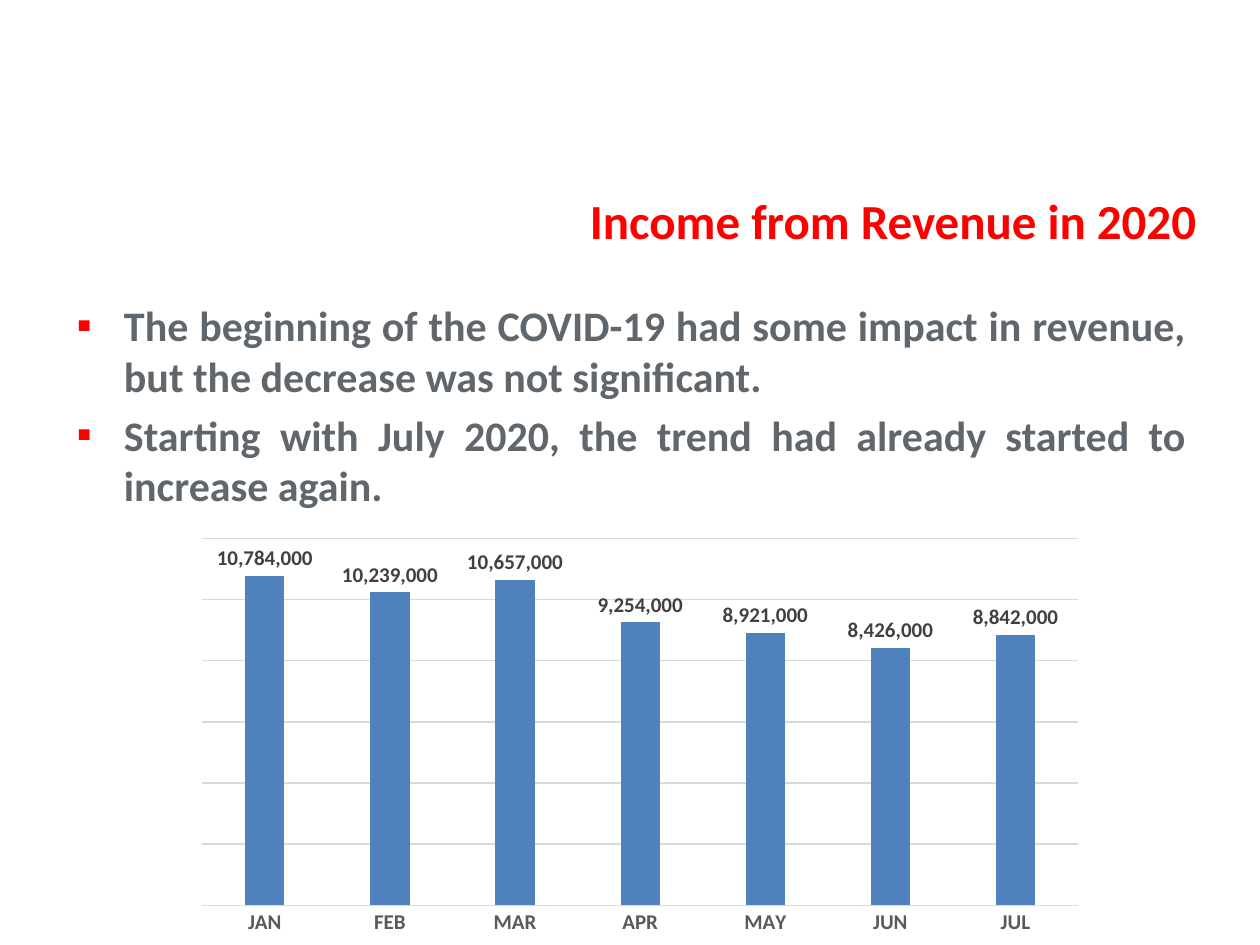
from lxml import etree
from pptx import Presentation
from pptx.chart.data import CategoryChartData
from pptx.dml.color import RGBColor
from pptx.enum.chart import XL_CHART_TYPE, XL_LABEL_POSITION, XL_TICK_LABEL_POSITION, XL_TICK_MARK
from pptx.enum.text import MSO_ANCHOR, PP_ALIGN
from pptx.oxml.ns import qn
from pptx.util import Cm, Pt

COLUMNS = XL_CHART_TYPE.COLUMN_CLUSTERED
OUTSIDE_END = XL_LABEL_POSITION.OUTSIDE_END
NO_LABELS = XL_TICK_LABEL_POSITION.NONE
NO_TICKS = XL_TICK_MARK.NONE
MIDDLE = MSO_ANCHOR.MIDDLE
TOP = MSO_ANCHOR.TOP
RIGHT = PP_ALIGN.RIGHT
JUSTIFY = PP_ALIGN.JUSTIFY

FONT = "Calibri"
RED = RGBColor(0xFF, 0x00, 0x00)
SLATE = RGBColor(0x5F, 0x66, 0x6C)
BLUE = RGBColor(0x4F, 0x81, 0xBD)
BLACK = RGBColor(0x00, 0x00, 0x00)
DARK_GRAY = RGBColor(0x40, 0x40, 0x40)
MID_GRAY = RGBColor(0x59, 0x59, 0x59)
LIGHT_GRAY = RGBColor(0xD9, 0xD9, 0xD9)

HEADING = "Income from Revenue in 2020"
FINDINGS = [
    "The beginning of the COVID-19 had some impact in revenue, but the decrease was not significant.",
    "Starting with July 2020, the trend had already started to increase again.",
]
REVENUE = {
    "JAN": 10784000,
    "FEB": 10239000,
    "MAR": 10657000,
    "APR": 9254000,
    "MAY": 8921000,
    "JUN": 8426000,
    "JUL": 8842000,
}
NUMBER_FORMAT = "#,##0"


def style_font(font, size, color, bold=True):
    font.name = FONT
    font.size = Pt(size)
    font.bold = bold
    font.color.rgb = color


def style_line(line, color):
    line.color.rgb = color
    line.width = Pt(0.75)


def add_text_frame(slide, left, top, width, height, anchor):
    frame = slide.shapes.add_textbox(left, top, width, height).text_frame
    frame.word_wrap = True
    frame.vertical_anchor = anchor
    return frame


def add_run(paragraph, text, size, color):
    run = paragraph.add_run()
    run.text = text
    style_font(run.font, size, color)


def add_bullet(paragraph, color):
    properties = paragraph._p.get_or_add_pPr()
    indent = Cm(0.95)
    properties.set("marL", str(indent))
    properties.set("indent", str(-indent))
    bullet_color = etree.SubElement(properties, qn("a:buClr"))
    etree.SubElement(bullet_color, qn("a:srgbClr"), val=str(color))
    etree.SubElement(properties, qn("a:buFont"), typeface=FONT)
    etree.SubElement(properties, qn("a:buChar"), char="▪")


def add_heading(slide):
    frame = add_text_frame(slide, Cm(1.5), Cm(3.73), Cm(22.86), Cm(1.42), MIDDLE)
    paragraph = frame.paragraphs[0]
    paragraph.alignment = RIGHT
    add_run(paragraph, HEADING, 28, RED)


def add_findings(slide):
    frame = add_text_frame(slide, Cm(1.3), Cm(5.92), Cm(22.86), Cm(11.6), TOP)
    for index, finding in enumerate(FINDINGS):
        paragraph = frame.add_paragraph() if index else frame.paragraphs[0]
        add_bullet(paragraph, RED)
        paragraph.alignment = JUSTIFY
        if index:
            paragraph.space_before = Pt(4.8)
        add_run(paragraph, finding, 24, SLATE)


def add_revenue_chart(slide):
    revenue_data = CategoryChartData(number_format=NUMBER_FORMAT)
    revenue_data.categories = list(REVENUE)
    revenue_data.add_series("Series 1", list(REVENUE.values()))
    chart = slide.shapes.add_chart(
        COLUMNS, Cm(3.71), Cm(10.69), Cm(18.39), Cm(8.33), revenue_data
    ).chart
    chart.has_legend = False
    chart.has_title = False
    style_font(chart.font, 10, BLACK, bold=False)

    months = chart.category_axis
    months.major_tick_mark = NO_TICKS
    style_font(months.tick_labels.font, 12, MID_GRAY)
    style_line(months.format.line, LIGHT_GRAY)

    amounts = chart.value_axis
    amounts.visible = False
    amounts.minimum_scale = 0
    amounts.maximum_scale = 12000000
    amounts.major_unit = 2000000
    amounts.tick_label_position = NO_LABELS
    amounts.has_major_gridlines = True
    style_line(amounts.major_gridlines.format.line, LIGHT_GRAY)

    columns = chart.plots[0]
    columns.gap_width = 219
    columns.overlap = -27
    columns.vary_by_categories = False
    fill = columns.series[0].format.fill
    fill.solid()
    fill.fore_color.rgb = BLUE

    labels = columns.series[0].data_labels
    labels.show_value = True
    labels.position = OUTSIDE_END
    labels.number_format = NUMBER_FORMAT
    labels.number_format_is_linked = False
    style_font(labels.font, 12, DARK_GRAY)


def main():
    presentation = Presentation()
    presentation.slide_width = Cm(25.4)
    presentation.slide_height = Cm(19.05)
    slide = presentation.slides.add_slide(presentation.slide_layouts[6])
    add_heading(slide)
    add_findings(slide)
    add_revenue_chart(slide)
    presentation.save("out.pptx")


if __name__ == "__main__":
    main()
